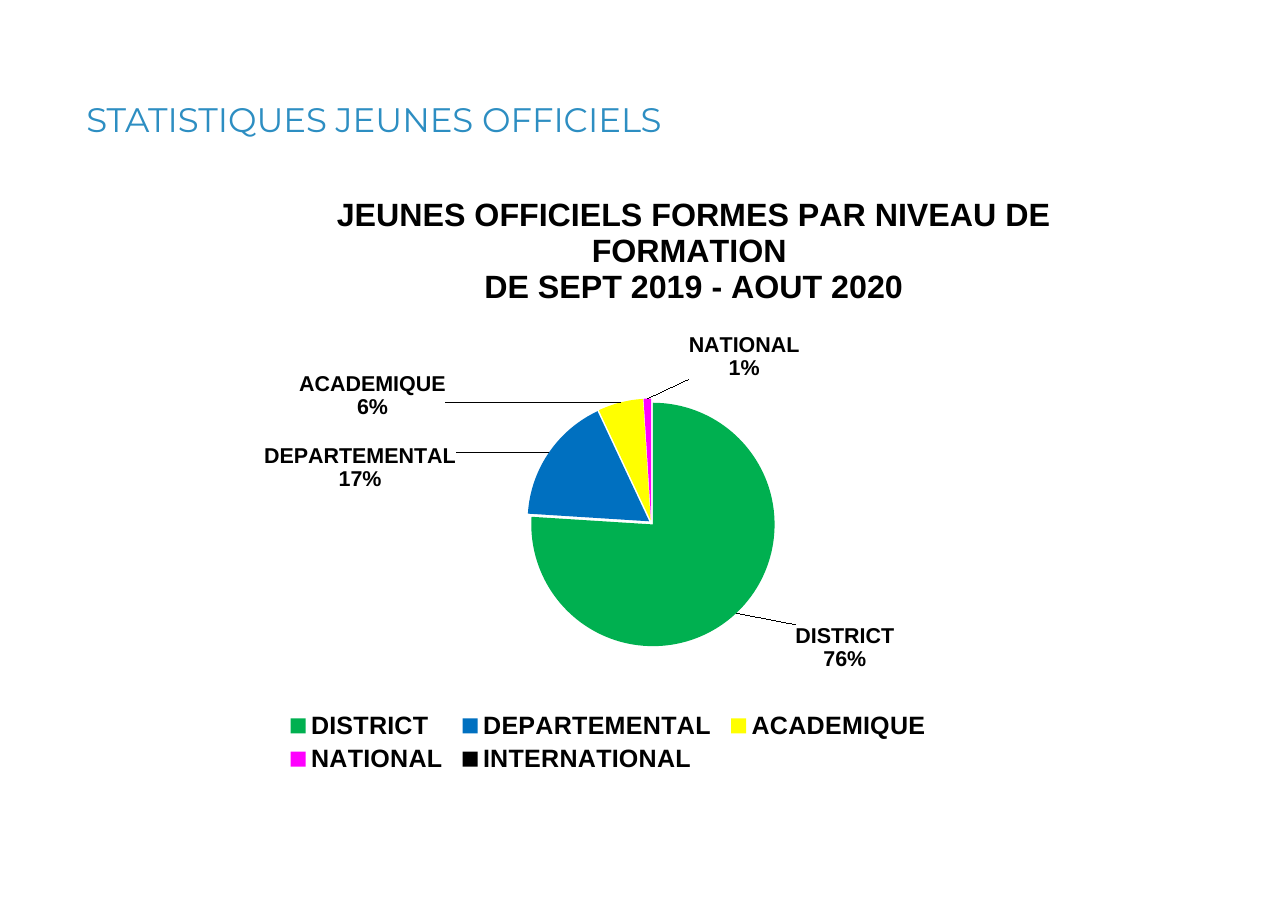
"""Build the slide of young officials trained, by level, as a pie chart."""
from pptx import Presentation
from pptx.chart.data import CategoryChartData
from pptx.dml.color import RGBColor
from pptx.enum import chart as ch, text
from pptx.oxml import parse_xml
from pptx.oxml.ns import nsdecls, qn
from pptx.util import Inches, Pt

BLUE = RGBColor(0x2D, 0x8E, 0xC2)
BLACK = RGBColor(0, 0, 0)
HEADING = "STATISTIQUES JEUNES OFFICIELS"
CHART_TITLE = ["JEUNES OFFICIELS FORMES PAR NIVEAU DE FORMATION ",
               "DE SEPT 2019 - AOUT 2020"]
LEVELS = [
    ("DISTRICT", 76, RGBColor(0x00, 0xB0, 0x50), (0.05, 0.01)),
    ("DEPARTEMENTAL", 17, RGBColor(0x00, 0x70, 0xC0), (-0.08, 0.07)),
    ("ACADEMIQUE", 6, RGBColor(0xFF, 0xFF, 0x00), (-0.16, 0.04)),
    ("NATIONAL", 1, RGBColor(0xFF, 0x00, 0xFF), (0.09, -0.02)),
    ("INTERNATIONAL", 0, BLACK, None),
]
LABEL_FORMAT = (
    '<c:spPr><a:noFill/><a:ln><a:noFill/></a:ln></c:spPr>'
    '<c:txPr><a:bodyPr/><a:p><a:pPr><a:defRPr sz="1200" b="1"><a:solidFill>'
    f'<a:srgbClr val="{BLACK}"/></a:solidFill><a:latin typeface="Arial"/>'
    '</a:defRPr></a:pPr><a:endParaRPr lang="fr-FR"/></a:p></c:txPr>'
    '<c:dLblPos val="outEnd"/><c:showLegendKey val="0"/><c:showVal val="0"/>'
    '<c:showCatName val="1"/><c:showSerName val="0"/><c:showPercent val="1"/>'
    '<c:showBubbleSize val="0"/><c:separator>\n</c:separator>')


def set_font(font, **values):
    for name, value in dict(name="Arial", bold=True, **values).items():
        setattr(font, name, value)
    font.color.rgb = BLACK


def set_layout(parent, index, **values):
    for old in parent.findall(qn("c:layout")):
        parent.remove(old)
    modes = {"xMode": "edge", "yMode": "edge"}
    if parent.tag == qn("c:plotArea"):
        modes = {"layoutTarget": "inner", **modes}
    items = "".join(f'<c:{k} val="{v}"/>' for k, v in {**modes, **values}.items())
    parent.insert(index, parse_xml(
        f'<c:layout {nsdecls("c")}><c:manualLayout>{items}'
        '</c:manualLayout></c:layout>'))


def point_label(i, offset):
    if offset is None:
        return f'<c:dLbl><c:idx val="{i}"/><c:delete val="1"/></c:dLbl>'
    x, y = offset
    return (f'<c:dLbl><c:idx val="{i}"/><c:layout><c:manualLayout>'
            f'<c:x val="{x}"/><c:y val="{y}"/></c:manualLayout></c:layout>'
            f'{LABEL_FORMAT}</c:dLbl>')


def add_heading(s):
    tf = s.shapes.add_textbox(Inches(0.67), Inches(0.75),
                              Inches(8.66), Inches(0.35)).text_frame
    for side in ("left", "top", "right", "bottom"):
        setattr(tf, f"margin_{side}", 0)
    tf.word_wrap = True
    tf.vertical_anchor = text.MSO_ANCHOR.MIDDLE
    r = tf.paragraphs[0].add_run()
    r.text = HEADING
    r.font.name, r.font.size = "Montserrat", Pt(19)
    r.font.color.rgb = BLUE


def add_pie(s):
    data = CategoryChartData()
    data.categories = [level[0] for level in LEVELS]
    data.add_series("Series 1", [level[1] for level in LEVELS])
    chart = s.shapes.add_chart(ch.XL_CHART_TYPE.PIE, Inches(0.49), Inches(1.43),
                               Inches(8.38), Inches(4.61), data).chart
    chart.font.name, chart.font.size = "Arial", Pt(10)
    chart.font.color.rgb = BLACK

    chart.has_title = True
    title = chart.chart_title
    title.include_in_layout = False
    tf = title.text_frame
    for i, line in enumerate(CHART_TITLE):
        p = tf.paragraphs[0] if i == 0 else tf.add_paragraph()
        set_font(p.font, size=Pt(18))
        r = p.add_run()
        r.text = line
        set_font(r.font, size=Pt(18))
    set_layout(title._element, 1, x=0.25, y=0.01)

    chart.has_legend = True
    legend = chart.legend
    legend.position = ch.XL_LEGEND_POSITION.BOTTOM
    legend.include_in_layout = False
    set_font(legend.font, size=Pt(14))
    set_layout(legend._element, 1, x=0.2, y=0.88, w=0.61, h=0.12)

    plot = chart.plots[0]
    plot.vary_by_categories = True
    set_layout(chart._chartSpace.chart.plotArea, 0, x=0.43, y=0.36, w=0.23, h=0.42)
    series = plot.series[0]
    for i, level in enumerate(LEVELS):
        fmt = series.points[i].format
        fmt.fill.solid()
        fmt.fill.fore_color.rgb = level[2]
        fmt.line.fill.background()
    ser = series._element
    ser.find(qn("c:dPt")).addprevious(
        parse_xml(f'<c:explosion {nsdecls("c")} val="2"/>'))
    labels = "".join(point_label(i, level[3]) for i, level in enumerate(LEVELS))
    ser.find(qn("c:cat")).addprevious(parse_xml(
        f'<c:dLbls {nsdecls("c", "a")}>{labels}{LABEL_FORMAT}'
        '<c:showLeaderLines val="1"/></c:dLbls>'))


def main():
    prs = Presentation()
    prs.slide_width, prs.slide_height = Inches(10), Inches(7.07)
    s = prs.slides.add_slide(prs.slide_layouts[6])
    add_heading(s)
    add_pie(s)
    prs.save("out.pptx")


if __name__ == "__main__":
    main()
